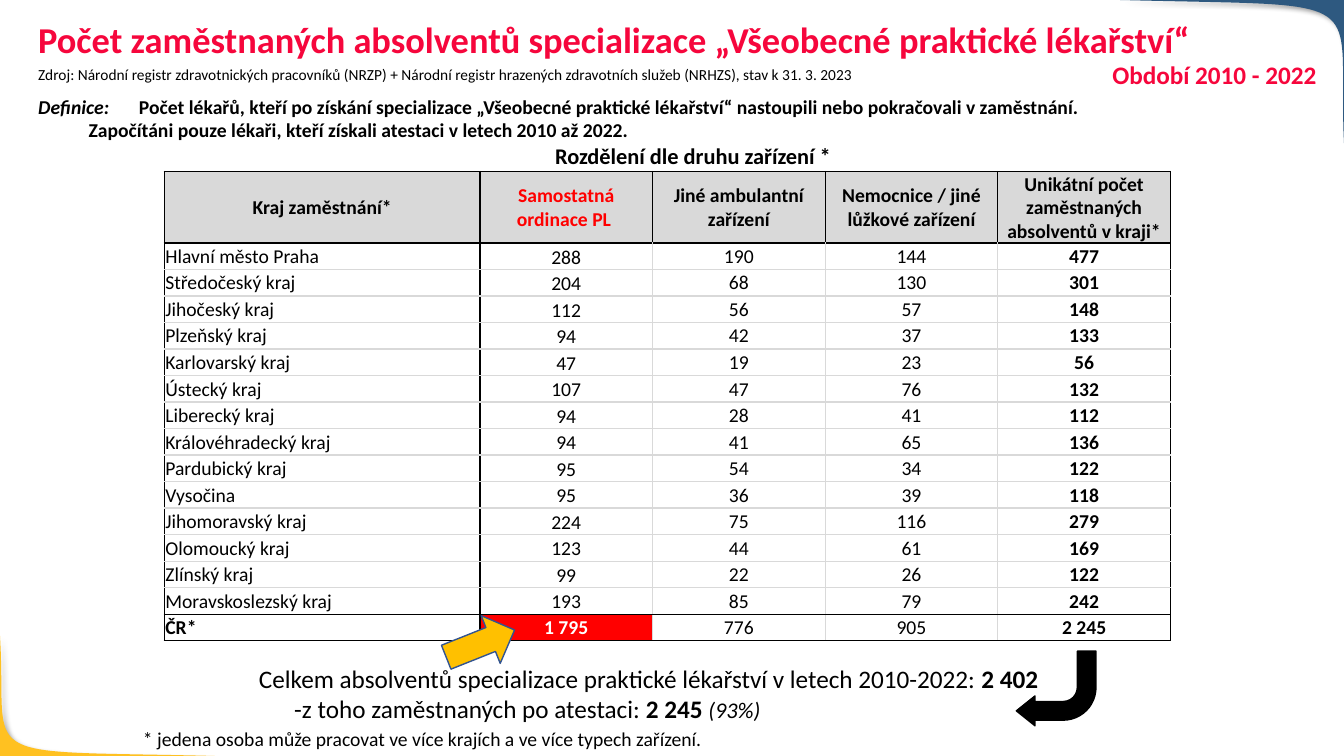
"""Build a slide on employed graduates of general practice."""
from lxml import etree
from pptx import Presentation
from pptx import util as u
from pptx.dml.color import RGBColor
from pptx.enum import shapes, text
from pptx.oxml.ns import qn

BLACK, GREY, ROSE, RED = "000000", "D9D9D9", "F6063C", "FF0000"
MID = text.PP_ALIGN.CENTER
HEADS = ["Kraj zaměstnání*", "Samostatná ordinace PL ", "Jiné ambulantní zařízení",
         "Nemocnice / jiné lůžkové zařízení", "Unikátní počet zaměstnaných absolventů v kraji*"]
ROWS = [
    ["Hlavní město Praha", "288", "190", "144", "477"],
    ["Středočeský kraj", "204", "68", "130", "301"],
    ["Jihočeský kraj", "112", "56", "57", "148"],
    ["Plzeňský kraj", "94", "42", "37", "133"],
    ["Karlovarský kraj", "47", "19", "23", "56"],
    ["Ústecký kraj", "107", "47", "76", "132"],
    ["Liberecký kraj", "94", "28", "41", "112"],
    ["Královéhradecký kraj", "94", "41", "65", "136"],
    ["Pardubický kraj", "95", "54", "34", "122"],
    ["Vysočina", "95", "36", "39", "118"],
    ["Jihomoravský kraj", "224", "75", "116", "279"],
    ["Olomoucký kraj", "123", "44", "61", "169"],
    ["Zlínský kraj", "99", "22", "26", "122"],
    ["Moravskoslezský kraj", "193", "85", "79", "242"],
    ["ČR*", "1 795", "776", "905", "2 245"],
]


def color(code):
    """Turn a hex string into a colour."""
    return RGBColor.from_string(code)


def place(box):
    """Turn left, top, width and height into lengths."""
    return [u.Inches(n) for n in box]


def paint(shape, fill, line=None):
    """Set the fill and the line of a shape."""
    shape.shadow.inherit = False
    shape.fill.solid()
    shape.fill.fore_color.rgb = color(fill)
    if line:
        shape.line.color.rgb = color(line)
        shape.line.width = u.Pt(1)
    else:
        shape.line.fill.background()


def style(para, size, ink=BLACK, bold=None, align=None):
    """Set the font and alignment of a paragraph."""
    font = para.font
    font.name, font.size, font.bold = "Calibri", u.Pt(size), bold
    font.color.rgb = color(ink)
    para.alignment = align


def label(slide, box, words, size, ink=BLACK, bold=None, align=None):
    """Add a one-paragraph text box and return its frame."""
    frame = slide.shapes.add_textbox(*place(box)).text_frame
    frame.word_wrap = True
    para = frame.paragraphs[0]
    para.text = words
    style(para, size, ink, bold, align)
    return frame


def add_run(para, words, **marks):
    """Append a run with its own font marks."""
    run = para.add_run()
    run.text = words
    for key, value in marks.items():
        setattr(run.font, key, value)


def corner(slide, curve, tip, fill):
    """Draw a corner bounded by a Bezier curve and a slide corner."""
    steps = 40
    dots = []
    for i in range(steps + 1):
        t = i / steps
        mix = ((1 - t) ** 3, 3 * t * (1 - t) ** 2, 3 * t * t * (1 - t), t ** 3)
        dots.append([u.Inches(sum(m * p[k] for m, p in zip(mix, curve))) for k in (0, 1)])
    path = slide.shapes.build_freeform(*dots[0], scale=1.0)
    path.add_line_segments(dots[1:] + [place(tip)], close=True)
    shape = path.convert_to_shape()
    paint(shape, fill)
    glow = etree.SubElement(shape._element.spPr.find(qn("a:effectLst")), qn("a:outerShdw"),
                            blurRad=str(u.Pt(4)), dist=str(u.Pt(3)), dir="2700000",
                            algn="tl", rotWithShape="0")
    tint = etree.SubElement(glow, qn("a:srgbClr"), val=BLACK)
    etree.SubElement(tint, qn("a:alpha"), val="40000")


def border(cell, row, col):
    """Draw black outer and divider edges, grey inner ones."""
    last = len(ROWS)
    dark = {"L": row == 0 or col < 2, "R": row == 0 or col in (0, 4),
            "T": row in (0, 1, last), "B": row in (0, last - 1, last)}
    props = cell._tc.get_or_add_tcPr()
    for i, side in enumerate("LRTB"):
        edge = etree.Element(qn("a:ln" + side), w=str(u.Pt(1)))
        fill = etree.SubElement(edge, qn("a:solidFill"))
        etree.SubElement(fill, qn("a:srgbClr"), val=BLACK if dark[side] else GREY)
        props.insert(i, edge)


def fill_cell(cell, row, col, words):
    """Write and style one table cell."""
    last = len(ROWS)
    total = row == last and col == 1
    ink = "FFFFFF" if total else RED if row == 0 and col == 1 else BLACK
    para = cell.text_frame.paragraphs[0]
    para.text = words
    style(para, 14, ink, row == 0 or col == 4 or (row == last and col < 2),
          MID if row == 0 or col else None)
    low = col == 1 and 0 < row < last
    cell.vertical_anchor = text.MSO_ANCHOR.BOTTOM if low else text.MSO_ANCHOR.MIDDLE
    cell.margin_left = cell.margin_right = cell.margin_top = u.Inches(0.01)
    cell.margin_bottom = 0
    if row == 0 or total:
        cell.fill.solid()
        cell.fill.fore_color.rgb = color(RED if total else GREY)
    else:
        cell.fill.background()
    border(cell, row, col)


def regions(slide, box):
    """Add the table of regions."""
    data = [HEADS] + ROWS
    table = slide.shapes.add_table(len(data), len(HEADS), *place(box)).table
    table.horz_banding = table.first_row = False
    first, head = 3.13, 0.71
    for i, col in enumerate(table.columns):
        col.width = u.Inches((box[2] - first) / 4 if i else first)
    for i, row in enumerate(table.rows):
        row.height = u.Inches((box[3] - head) / len(ROWS) if i else head)
    for r, line in enumerate(data):
        for c, words in enumerate(line):
            fill_cell(table.cell(r, c), r, c, words)


def header(slide, box):
    """Add the title, source, period and definition."""
    x, y, w, h = box
    title = label(slide, (x, y, w, 0.85),
                  "Počet zaměstnaných absolventů specializace „Všeobecné praktické lékařství“",
                  26, ROSE, True)
    title.paragraphs[0].line_spacing = 0.9
    label(slide, (x + 10.47, y + 0.37, 2.59, 0.4), "Období 2010 - 2022", 18, ROSE, True, MID)
    label(slide, (x, y + 0.43, 8.59, 0.29),
          "Zdroj: Národní registr zdravotnických pracovníků (NRZP) + Národní registr hrazených "
          "zdravotních služeb (NRHZS), stav k 31. 3. 2023", 11)
    para = label(slide, (x, y + 0.72, 12.25, 0.57), "", 14, BLACK, True).paragraphs[0]
    add_run(para, "Definice: ", italic=True)
    add_run(para, "\tPočet lékařů, kteří po získání specializace „Všeobecné praktické lékařství“ "
                  "nastoupili nebo pokračovali v zaměstnání. ")
    para.add_line_break()
    add_run(para, "\tZapočítáni pouze lékaři, kteří získali atestaci v letech 2010 až 2022.")
    label(slide, (x + 3, y + 1.19, 7.19, 0.37), "Rozdělení dle druhu zařízení *", 16,
          BLACK, True, MID)


def summary(slide, box):
    """Add the totals, the footnote and both arrows."""
    x, y, w, h = box
    frame = label(slide, (x, y, w, 0.71), "", 18)
    para = frame.paragraphs[0]
    add_run(para, "Celkem absolventů specializace praktické lékařství v letech 2010-2022: ")
    add_run(para, "2 402", bold=True)
    para = frame.add_paragraph()
    style(para, 18)
    para._p.get_or_add_pPr().set("marL", str(u.Inches(0.35)))
    add_run(para, "-z toho zaměstnaných po atestaci: ")
    add_run(para, "2 245 ", bold=True)
    add_run(para, "(93%)", size=u.Pt(16), italic=True)
    label(slide, (x - 1.15, y + 0.63, 9.54, 0.34),
          "* jedena osoba může pracovat ve více krajích a ve více typech zařízení.", 14)
    kind = shapes.MSO_SHAPE
    bent = slide.shapes.add_shape(kind.BENT_ARROW, *place((x + 7.61, y - 0.07, 0.79, 0.74)))
    for i, value in enumerate((0.25, 0.2, 0.25, 0.44)):
        bent.adjustments[i] = value
    bent.rotation = 180
    paint(bent, BLACK, BLACK)
    arrow = slide.shapes.add_shape(kind.RIGHT_ARROW, *place((x + 1.93, y - 0.4, 0.73, 0.51)))
    arrow.rotation = 338.3
    paint(arrow, "FFC000", "325491")


def main():
    """Build and save the slide."""
    deck = Presentation()
    deck.slide_width, deck.slide_height = u.Inches(13.33), u.Inches(7.5)
    slide = deck.slides.add_slide(deck.slide_layouts[6])
    corner(slide, [(2.13, 7.5), (-0.34, 7.44), (0.08, 7.59), (0, 6.3)], (0, 7.5), "FFC121")
    corner(slide, [(11.11, 0), (13.7, 0.07), (13.26, -0.1), (13.33, 1.42)], (13.33, 0), "2E5980")
    header(slide, (0.28, 0.17, 12.84, 1.5))
    regions(slide, (1.63, 1.7, 9.98, 4.66))
    summary(slide, (2.47, 6.53, 8.24, 0.97))
    deck.save("out.pptx")


if __name__ == "__main__":
    main()
